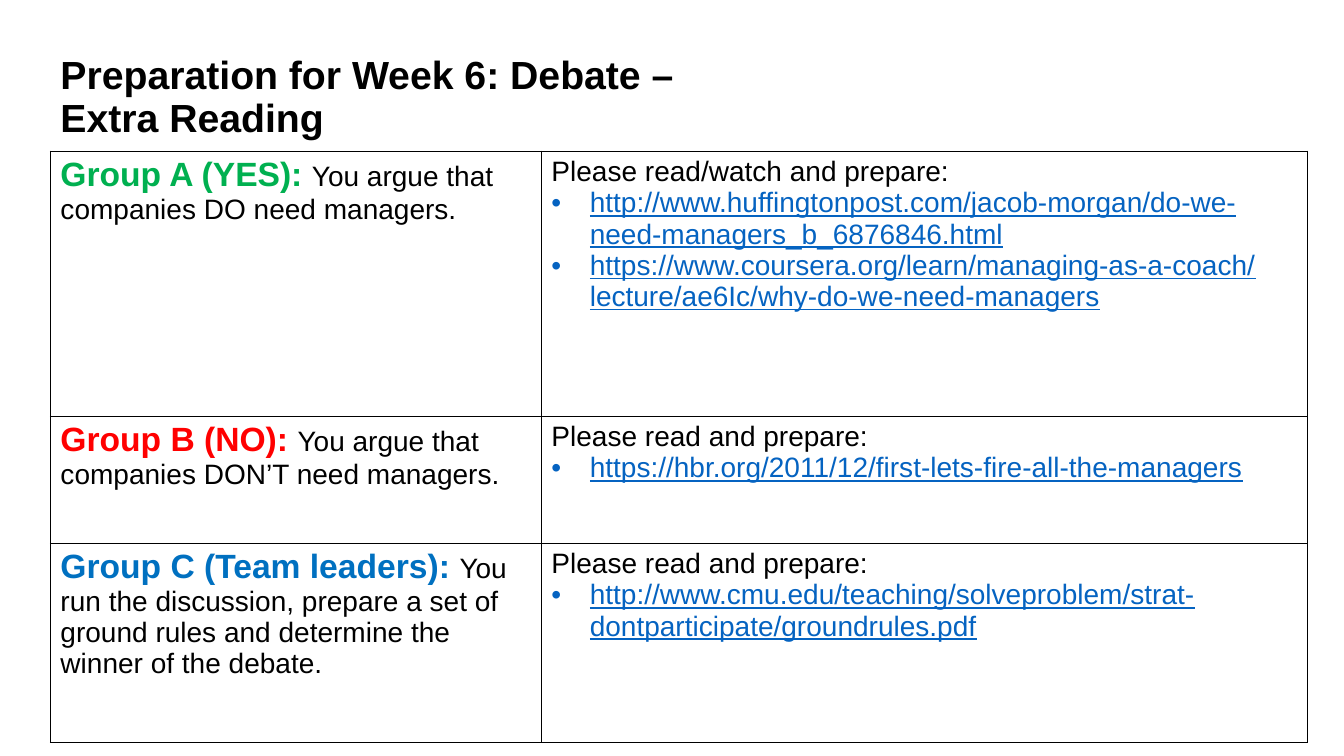
from typing import NamedTuple

from lxml.etree import SubElement
from pptx import Presentation
from pptx.dml.color import RGBColor
from pptx.enum.text import MSO_ANCHOR, PP_ALIGN
from pptx.oxml.ns import qn
from pptx.util import Inches, Pt

FONT = "Arial"
BLACK, WHITE, LINK = "000000", "FFFFFF", "0563C1"


class Group(NamedTuple):
    name: str
    color: str
    task: str
    intro: str
    links: list[str]
    height: float


GROUPS = [
    Group("Group A (YES): ", "00B050",
          "You argue that companies DO need managers.",
          "Please read/watch and prepare:",
          ["http://www.huffingtonpost.com/jacob-morgan/do-we-need-managers_b_6876846.html",
           "https://www.coursera.org/learn/managing-as-a-coach/lecture/ae6Ic/why-do-we-need-managers"],
          2.63),
    Group("Group B (NO): ", "FF0000",
          "You argue that companies DON’T need managers.",
          "Please read and prepare:",
          ["https://hbr.org/2011/12/first-lets-fire-all-the-managers"],
          1.26),
    Group("Group C (Team leaders): ", "0070C0",
          "You run the discussion, prepare a set of ground rules "
          "and determine the winner of the debate.",
          "Please read and prepare:",
          ["http://www.cmu.edu/teaching/solveproblem/strat-dontparticipate/groundrules.pdf"],
          1.98),
]
WIDTHS = [4.87, 7.6]


def style(font, size: float, color: str, bold: bool = False) -> None:
    font.name, font.size, font.bold = FONT, Pt(size), bold
    font.color.rgb = RGBColor.from_string(color)


def add_bullet(para) -> None:
    props = para._p.get_or_add_pPr()
    props.set("marL", str(Inches(0.38)))
    props.set("indent", str(-Inches(0.38)))
    SubElement(props, qn("a:buFont"), typeface=FONT)
    SubElement(props, qn("a:buChar"), char="•")


def set_cell(cell) -> None:
    props = cell._tc.get_or_add_tcPr()
    for side in ("lnL", "lnR", "lnT", "lnB"):
        line = SubElement(props, qn(f"a:{side}"), w=str(Pt(1)))
        fill = SubElement(line, qn("a:solidFill"))
        SubElement(fill, qn("a:srgbClr"), val=BLACK)
    cell.fill.solid()
    cell.fill.fore_color.rgb = RGBColor.from_string(WHITE)


def fill_task(cell, group: Group) -> None:
    para = cell.text_frame.paragraphs[0]
    for text, size, color, bold in ((group.name, 24, group.color, True),
                                    (group.task, 20, BLACK, False)):
        run = para.add_run()
        run.text = text
        style(run.font, size, color, bold)


def fill_links(cell, group: Group) -> None:
    frame = cell.text_frame
    frame.text = group.intro
    style(frame.paragraphs[0].font, 20, BLACK)
    for link in group.links:
        para = frame.add_paragraph()
        para.text = link
        add_bullet(para)
        style(para.font, 20, LINK)
        para.font.underline = True


def main() -> None:
    deck = Presentation()
    deck.slide_width, deck.slide_height = Inches(13.33), Inches(7.5)
    slide = deck.slides.add_slide(deck.slide_layouts[5])

    # Title
    title = slide.shapes.title
    title.left, title.top = Inches(0.5), Inches(0.45)
    title.width, title.height = Inches(11.5), Inches(1.05)
    frame = title.text_frame
    frame.text = "Preparation for Week 6: Debate – \vExtra Reading"
    frame.vertical_anchor = MSO_ANCHOR.MIDDLE
    para = frame.paragraphs[0]
    para.alignment, para.line_spacing = PP_ALIGN.LEFT, 0.9
    style(para.font, 28, BLACK, True)

    # Table of groups
    table = slide.shapes.add_table(
        len(GROUPS), len(WIDTHS), Inches(0.5), Inches(1.5),
        Inches(sum(WIDTHS)), Inches(sum(g.height for g in GROUPS))).table
    for col, width in zip(table.columns, WIDTHS):
        col.width = Inches(width)
    for row, group in zip(table.rows, GROUPS):
        row.height = Inches(group.height)
        task, links = row.cells
        fill_task(task, group)
        fill_links(links, group)
        set_cell(task)
        set_cell(links)

    deck.save("out.pptx")


if __name__ == "__main__":
    main()
